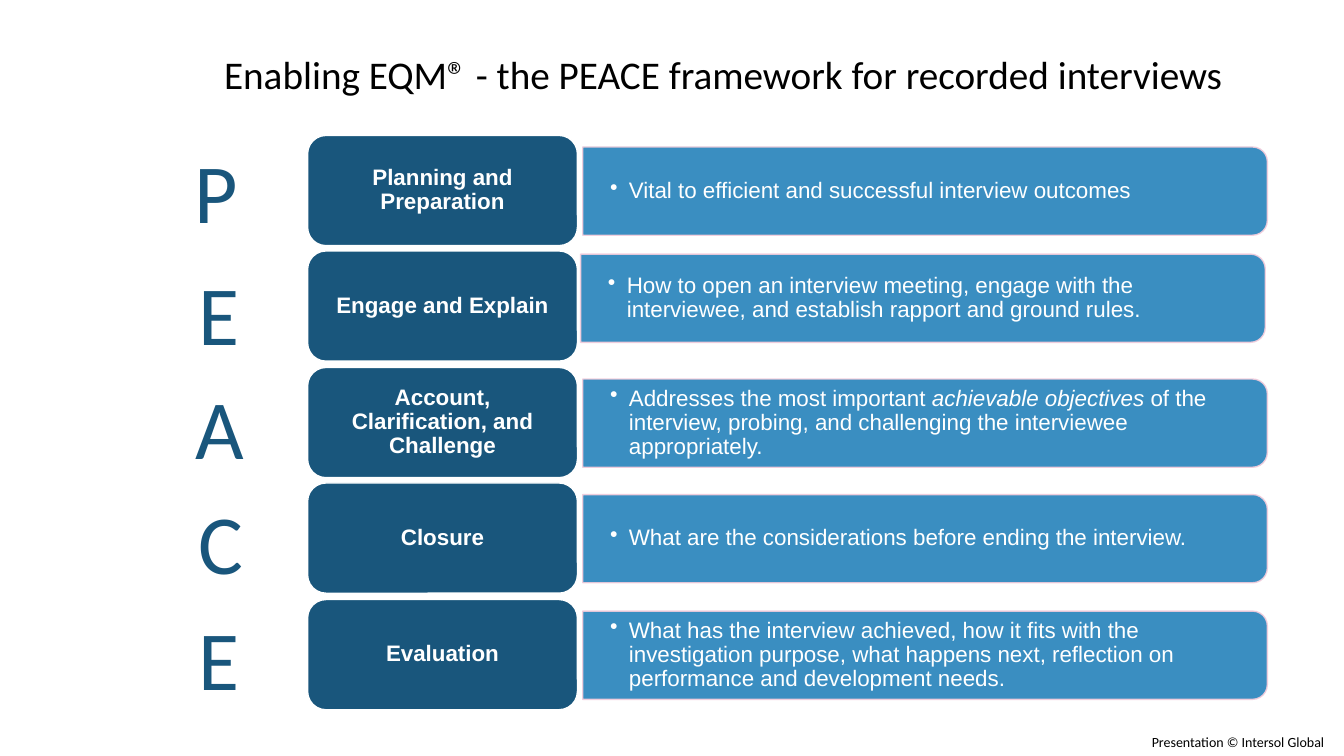
"""Build the slide on the PEACE framework for recorded interviews."""
import pptx
import pptx.util
import pptx.dml.color
import pptx.enum.shapes
import pptx.enum.text
import pptx.oxml.ns
import lxml.etree

KIND = pptx.enum.shapes.MSO_SHAPE
ALIGN = pptx.enum.text.PP_ALIGN
MIDDLE = pptx.enum.text.MSO_ANCHOR.MIDDLE
NAVY, BLUE, PINK, WHITE, BLACK = "19567C", "2582BB", "F4CDDC", "FFFFFF", "000000"
BODY = {"name": "Arial", "size": pptx.util.Pt(16)}
STEP, TOP = 110.5, 129

ROWS = [
    ("P", 176, 128, "Planning and Preparation", 0, 0,
     ["Vital to efficient and successful interview outcomes"]),
    ("E", 180, 244, "Engage and Explain", -2, -8,
     ["How to open an interview meeting, engage with the interviewee, "
      "and establish rapport and ground rules."]),
    ("A", 177, 353, "Account, Clarification, and Challenge", 0, 0,
     ["Addresses the most important ", "achievable objectives ",
      "of the interview, probing, and challenging the interviewee appropriately."]),
    ("C", 180, 462, "Closure", 0, 0,
     ["What are the considerations before ending the interview."]),
    ("E", 180, 573, "Evaluation", 0, 0,
     ["What has the interview achieved, how it fits with the investigation purpose, "
      "what happens next, reflection on performance and development needs."]),
]


def px(num):
    """Turn px into EMU."""
    return pptx.util.Emu(round(num * 9525))


def tint(form, code):
    """Set a colour format from a hex string."""
    form.rgb = pptx.dml.color.RGBColor.from_string(code)


def put(item, vals):
    """Set each named value on an object."""
    for key, val in vals.items():
        setattr(item, key, val)


class Deck:
    """Hold the style and the current slide."""

    def __init__(self):
        """Open a blank slide."""
        self.file = pptx.Presentation()
        put(self.file, {"slide_width": px(1280), "slide_height": px(720)})
        self.slide = self.file.slides.add_slide(self.file.slide_layouts[6])

    def shape(self, kind, box, fill, line, alpha=None):
        """Add a filled preset shape."""
        item = self.slide.shapes.add_shape(kind, *map(px, box))
        item.shadow.inherit = False
        item.fill.solid()
        tint(item.fill.fore_color, fill)
        tint(item.line.color, line)
        item.line.width = pptx.util.Pt(1)
        if alpha:
            for node in item.element.spPr.iter(pptx.oxml.ns.qn("a:srgbClr")):
                lxml.etree.SubElement(node, pptx.oxml.ns.qn("a:alpha"), val=str(alpha * 1000))
        return item

    def fill(self, item, parts, font, code, align=ALIGN.LEFT, pad=None, bullet=False):
        """Give an item one paragraph, with every second run in italics."""
        frame = item.text_frame
        frame.word_wrap = True
        para = frame.paragraphs[0]
        para.alignment = align
        if pad:
            side, edge = map(px, pad)
            put(frame, {"margin_left": side, "margin_right": side, "margin_top": edge,
                        "margin_bottom": edge, "vertical_anchor": MIDDLE})
            para.line_spacing = 0.9
        if bullet:
            props = para._p.get_or_add_pPr()
            props.set("marL", str(px(18)))
            props.set("indent", str(px(-18)))
            lxml.etree.SubElement(props, pptx.oxml.ns.qn("a:buChar"), char="•")
        for num, part in enumerate(parts):
            run = para.add_run()
            run.text = part
            put(run.font, {**font, "italic": num % 2 == 1})
            tint(run.font.color, code)

    def text(self, box, parts, font, code, **form):
        """Add a text box."""
        item = self.slide.shapes.add_textbox(*map(px, box))
        self.fill(item, parts, font, code, **form)

    def bar(self, left, top, parts):
        """Add a bar rounded on its right side, with bulleted text."""
        wide, high = 652, 84
        turn = (wide - high) // 2
        item = self.shape(KIND.ROUND_2_SAME_RECTANGLE,
                          (left + turn, top - turn, high, wide), BLUE, PINK, 90)
        item.rotation = 90
        self.text((left, top + 4, 647, 76), parts, BODY, WHITE, pad=(26, 13), bullet=True)

    def label(self, top, name):
        """Add the rounded box that names a stage."""
        item = self.shape(KIND.ROUNDED_RECTANGLE, (293, top, 257, 105), NAVY, WHITE)
        self.fill(item, [name], {**BODY, "bold": True}, WHITE, align=ALIGN.CENTER, pad=(12, 8))


def calibri(size):
    """Give the font values for Calibri text."""
    return {"name": "Calibri", "size": pptx.util.Pt(size)}


def main():
    """Draw the slide and save it."""
    deck = Deck()
    for num, (sign, left, high, name, right, down, parts) in enumerate(ROWS):
        top = int(TOP + num * STEP)
        deck.bar(555 + right, top + 11 + down, parts)
        deck.label(top, name)
        deck.text((left, high, 47, 107), [sign], calibri(60), NAVY)
    deck.text((1078, 694, 202, 26), ["Presentation © Intersol Global"], calibri(10), BLACK,
              align=ALIGN.CENTER)
    deck.text((204, 43, 1070, 55),
              ["Enabling EQM® - the PEACE framework for recorded interviews"], calibri(28), BLACK)
    deck.file.save("out.pptx")


if __name__ == "__main__":
    main()
